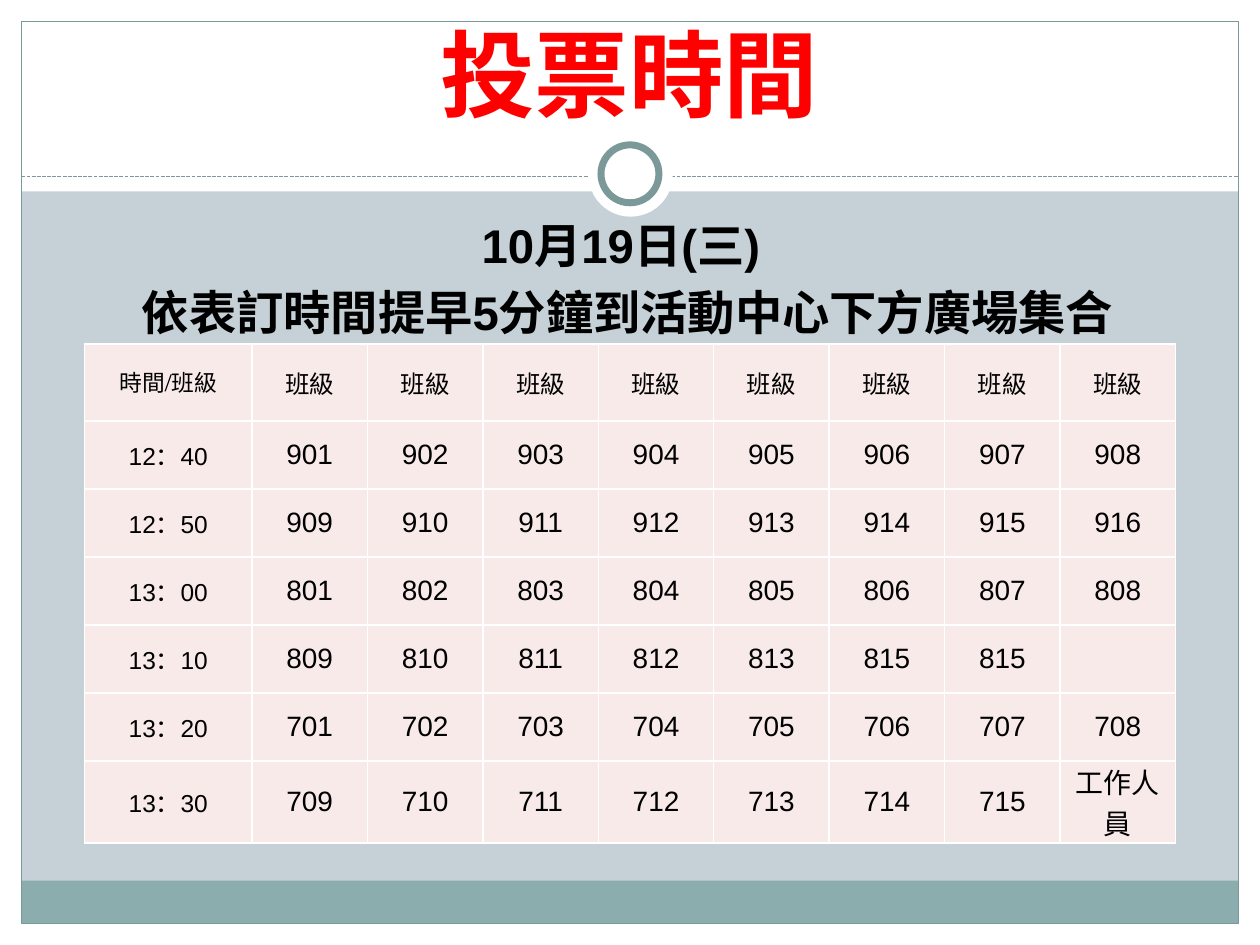
from lxml.etree import SubElement
from pptx import Presentation
from pptx.dml.color import RGBColor
from pptx.enum.dml import MSO_LINE
from pptx.enum.shapes import MSO_CONNECTOR, MSO_SHAPE
from pptx.enum.text import MSO_ANCHOR, PP_ALIGN
from pptx.oxml.ns import qn
from pptx.util import Inches, Pt

COLORS = {
    "background": "C5D1D7",
    "white": "FFFFFF",
    "band": "8CADAE",
    "frame": "7C999A",
    "title": "FF0000",
    "text": "000000",
    "cell": "F7EAE9",
}
SERIF = "TeX Gyre Schola"
SANS = "Arial"


def rgb(name):
    return RGBColor.from_string(COLORS[name])


class SlideBuilder:
    def __init__(self, slide):
        self.slide = slide
        fill = slide.background.fill
        fill.solid()
        fill.fore_color.rgb = rgb("background")

    def shape(self, kind, box, fill=None, line=None, line_width=0.75):
        shape = self.slide.shapes.add_shape(kind, *map(Inches, box))
        shape.shadow.inherit = False
        if fill:
            shape.fill.solid()
            shape.fill.fore_color.rgb = rgb(fill)
        else:
            shape.fill.background()
        if line:
            shape.line.color.rgb = rgb(line)
            shape.line.width = Pt(line_width)
        else:
            shape.line.fill.background()

    def dashed_line(self, left, right, y):
        divider = self.slide.shapes.add_connector(
            MSO_CONNECTOR.STRAIGHT, Inches(left), Inches(y), Inches(right), Inches(y))
        divider.line.color.rgb = rgb("frame")
        divider.line.width = Pt(0.75)
        divider.line.dash_style = MSO_LINE.SQUARE_DOT
        SubElement(divider._element.spPr, qn("a:effectLst"))

    def format_paragraph(self, paragraph, size, font, color="text", bold=False):
        paragraph.alignment = PP_ALIGN.CENTER
        for run in paragraph.runs:
            run.font.size = Pt(size)
            run.font.name = font
            run.font.bold = bold
            run.font.color.rgb = rgb(color)

    def text(self, box, wording, size, font, color="text", anchor=MSO_ANCHOR.TOP, before=0):
        frame = self.slide.shapes.add_textbox(*map(Inches, box)).text_frame
        frame.word_wrap = True
        frame.vertical_anchor = anchor
        frame.text = wording
        for paragraph in frame.paragraphs:
            paragraph.space_before = Pt(before)
            self.format_paragraph(paragraph, size, font, color, bold=True)

    def cell_borders(self, cell):
        properties = cell._tc.get_or_add_tcPr()
        for position, side in enumerate(("a:lnL", "a:lnR", "a:lnT", "a:lnB")):
            border = properties.makeelement(qn(side), {"w": str(Pt(1))})
            solid = SubElement(border, qn("a:solidFill"))
            SubElement(solid, qn("a:srgbClr"), val=COLORS["white"])
            properties.insert(position, border)

    def table(self, left, top, rows, widths, heights):
        box = (left, top, sum(widths), sum(heights))
        table = self.slide.shapes.add_table(
            len(rows), len(widths), *map(Inches, box)).table
        for column, width in zip(table.columns, widths):
            column.width = Inches(width)
        for row, height in zip(table.rows, heights):
            row.height = Inches(height)
        for r, wordings in enumerate(rows):
            for c, wording in enumerate(wordings):
                cell = table.cell(r, c)
                cell.fill.solid()
                cell.fill.fore_color.rgb = rgb("cell")
                cell.vertical_anchor = MSO_ANCHOR.MIDDLE
                cell.margin_left = cell.margin_right = Inches(0.02)
                cell.margin_top = cell.margin_bottom = 0
                cell.text = wording
                if r == 0:
                    size = 13 if c == 0 else 14
                else:
                    size = 14 if c == 0 else 16
                self.format_paragraph(
                    cell.text_frame.paragraphs[0], size, SERIF if r == 0 else SANS)
                self.cell_borders(cell)


def class_range(first, last):
    return [str(number) for number in range(first, last + 1)]


def main():
    presentation = Presentation()
    presentation.slide_width = Inches(10)
    presentation.slide_height = Inches(7.5)
    builder = SlideBuilder(presentation.slides.add_slide(presentation.slide_layouts[6]))

    margins = [(0, 7.33, 10, 0.17), (0, 0, 10, 1.52),
               (0, 0, 0.17, 7.5), (9.83, 0, 0.17, 7.5)]
    for margin in margins:
        builder.shape(MSO_SHAPE.RECTANGLE, margin, "white")
    builder.shape(MSO_SHAPE.RECTANGLE, (0.17, 6.99, 9.66, 0.34), "band")
    builder.shape(MSO_SHAPE.RECTANGLE, (0.17, 0.17, 9.66, 7.16), line="frame")
    builder.dashed_line(0.17, 9.83, 1.4)
    builder.shape(MSO_SHAPE.OVAL, (4.67, 1.05, 0.67, 0.67), "white")
    builder.shape(MSO_SHAPE.OVAL, (4.77, 1.15, 0.46, 0.46), "white", "frame", 4)

    builder.text((0.33, 0.25, 9.33, 0.83), "投票時間", 54, SERIF, "title", MSO_ANCHOR.BOTTOM)
    builder.text((0.33, 1.67, 9.3, 5),
                 "10月19日(三) \n依表訂時間提早5分鐘到活動中心下方廣場集合",
                 27, SANS, before=5.4)

    schedule = [
        ["時間/班級"] + ["班級"] * 8,
        ["12：40"] + class_range(901, 908),
        ["12：50"] + class_range(909, 916),
        ["13：00"] + class_range(801, 808),
        ["13：10"] + class_range(809, 813) + ["815", "815", ""],
        ["13：20"] + class_range(701, 708),
        ["13：30"] + class_range(709, 715) + ["工作人員"],
    ]
    time_width = 1.33
    class_width = (8.66 - time_width) / 8
    builder.table(0.67, 2.73, schedule,
                  [time_width] + [class_width] * 8, [0.61] + [0.54] * 5 + [0.65])
    presentation.save("out.pptx")


if __name__ == "__main__":
    main()
